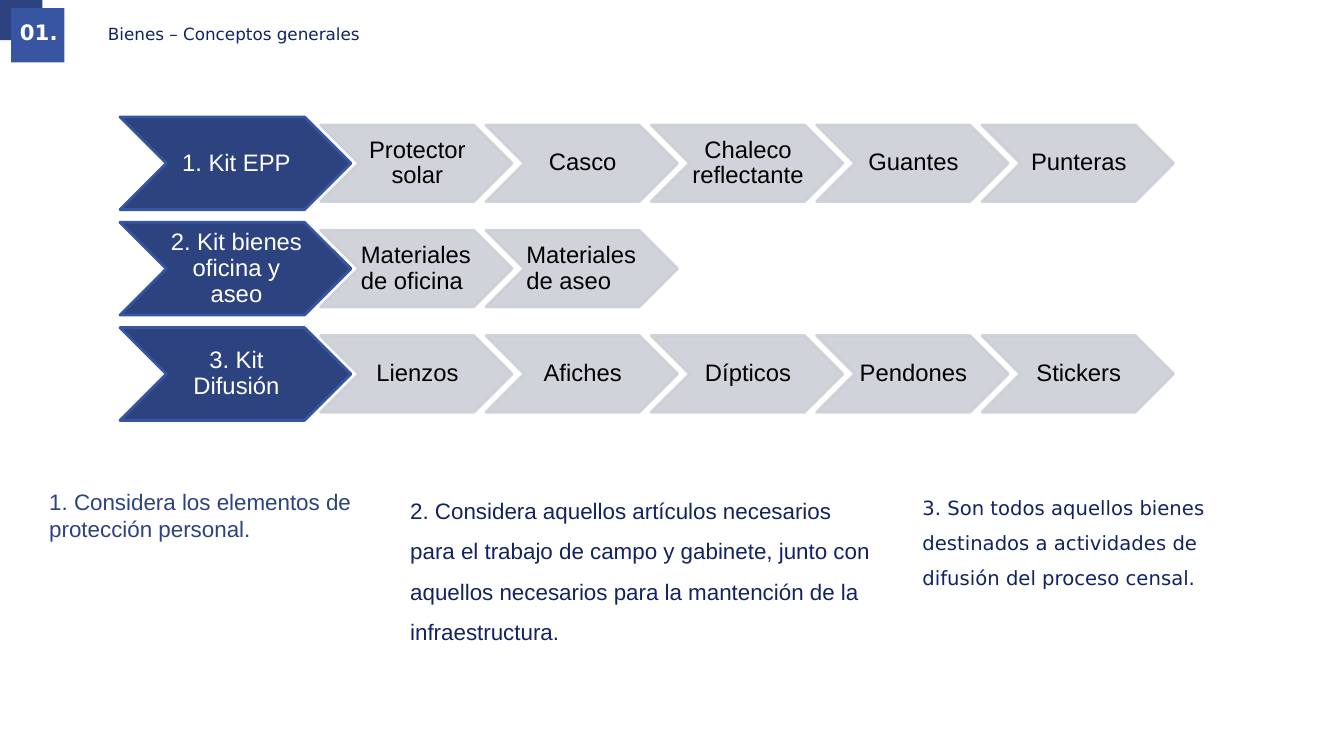
from dataclasses import dataclass

from lxml import etree
from pptx import Presentation
from pptx import util as u
from pptx.dml.color import RGBColor
from pptx.enum import shapes, text
from pptx.oxml import ns


@dataclass(frozen=True)
class Theme:
    navy: str = "2C437F"
    blue: str = "3755A1"
    ink: str = "122361"
    grey: str = "CDCFD8"
    white: str = "FFFFFF"
    black: str = "000000"
    plain: str = "Arial"
    wide: str = "DejaVu Sans"
    badge_size: float = 15.2
    title_size: float = 12
    kit_size: float = 17
    note_size: float = 16
    small_note_size: float = 14


THEME = Theme()
ALIGN = text.PP_ALIGN

KITS = [
    ("1. Kit EPP", ALIGN.CENTER,
     ["Protector solar", "Casco", "Chaleco reflectante", "Guantes", "Punteras"]),
    ("2. Kit bienes oficina y aseo", ALIGN.JUSTIFY,
     ["Materiales de oficina", "Materiales de aseo"]),
    ("3. Kit Difusión", ALIGN.CENTER,
     ["Lienzos", "Afiches", "Dípticos", "Pendones", "Stickers"]),
]


def write(shape, words, *, size, color, font=THEME.plain, bold=False,
          align=ALIGN.LEFT, anchor=text.MSO_ANCHOR.MIDDLE, spacing=0.9,
          insets=(0.1, 0.05, 0.1, 0.05)):
    frame = shape.text_frame
    frame.word_wrap = True
    frame.auto_size = text.MSO_AUTO_SIZE.NONE
    frame.vertical_anchor = anchor
    (frame.margin_left, frame.margin_top,
     frame.margin_right, frame.margin_bottom) = map(u.Inches, insets)
    para = frame.paragraphs[0]
    para.alignment = align
    para.line_spacing = spacing
    para.space_before = u.Pt(0)
    span = para.add_run()
    span.text = words
    span.font.name = font
    span.font.size = u.Pt(size)
    span.font.bold = bold
    span.font.color.rgb = RGBColor.from_string(color)


def add_block(page, kind, box, fill, line=None, opacity=None):
    shape = page.shapes.add_shape(kind, *map(u.Inches, box))
    shape.shadow.inherit = False
    shape.fill.solid()
    shape.fill.fore_color.rgb = RGBColor.from_string(fill)
    if line:
        shape.line.color.rgb = RGBColor.from_string(line)
        shape.line.width = u.Pt(2)
    else:
        shape.line.fill.background()
    if opacity:
        for color in shape.fill._xPr.iter(ns.qn("a:srgbClr")):
            etree.SubElement(color, ns.qn("a:alpha"), val=str(opacity * 1000))
    return shape


def add_header(page, box):
    left, top, width, height = box
    # Number badge
    rect = shapes.MSO_SHAPE.RECTANGLE
    add_block(page, rect, (left, top, 0.42, 0.4), THEME.navy)
    badge = add_block(page, rect, (left + 0.11, top + 0.08, 0.53, 0.54), THEME.blue)
    write(badge, "01.", size=THEME.badge_size, color=THEME.white, font=THEME.wide,
          bold=True, align=ALIGN.CENTER, spacing=0.7, insets=(0.02, 0.05, 0, 0.05))
    # Title
    title = page.shapes.title
    title.left, title.top = u.Inches(left + 1.07), u.Inches(top + 0.08)
    title.width, title.height = u.Inches(width - 1.07), u.Inches(height - 0.08)
    write(title, "Bienes – Conceptos generales", size=THEME.title_size,
          color=THEME.ink, font=THEME.wide, insets=(0, 0.05, 0.1, 0.05))


def add_kit_row(page, box, kit):
    name, item_align, items = kit
    left, top, head_width, height = box
    item_width, item_height, item_pitch = 1.9, 0.76, 1.64
    chevron = shapes.MSO_SHAPE.CHEVRON
    insets = (0.02, 0.01, 0, 0.01)

    head = add_block(page, chevron, box, THEME.navy, THEME.blue)
    write(head, name, size=THEME.kit_size, color=THEME.white,
          align=ALIGN.CENTER, insets=insets)

    item_top = top + (height - item_height) / 2
    for column, item in enumerate(items):
        item_left = left + 1.99 + column * item_pitch
        step = add_block(page, chevron, (item_left, item_top, item_width, item_height),
                         THEME.grey, THEME.grey, opacity=90)
        write(step, item, size=THEME.kit_size, color=THEME.black,
              align=item_align, insets=insets)


def add_kits(page, box):
    left, top, head_width, height = box
    row_height = 0.92
    pitch = (height - row_height) / (len(KITS) - 1)
    for row, kit in enumerate(KITS):
        add_kit_row(page, (left, top + row * pitch, head_width, row_height), kit)


def add_note(page, box, words, **style):
    note = page.shapes.add_textbox(*map(u.Inches, box))
    write(note, words, anchor=text.MSO_ANCHOR.TOP, **style)


def add_notes(page, left, top):
    add_note(page, (left, top + 0.04, 3.37, 0.64),
             "1. Considera los elementos de protección personal.",
             size=THEME.note_size, color=THEME.navy, spacing=1.0)
    add_note(page, (left + 3.58, top, 4.87, 1.72),
             "2. Considera aquellos artículos necesarios para el trabajo de campo y "
             "gabinete, junto con aquellos necesarios para la mantención de la "
             "infraestructura.",
             size=THEME.note_size, color=THEME.ink, spacing=1.5)
    add_note(page, (left + 8.66, top, 3.42, 1.16),
             "3. Son todos aquellos bienes destinados a actividades de difusión "
             "del proceso censal.",
             size=THEME.small_note_size, color=THEME.ink, font=THEME.wide, spacing=1.5)


def main():
    deck = Presentation()
    deck.slide_width, deck.slide_height = u.Inches(13.33), u.Inches(7.5)
    title_only = deck.slide_layouts.get_by_name("Title Only")
    page = deck.slides.add_slide(title_only)
    add_header(page, (0, 0, 12.73, 0.62))
    add_kits(page, (1.19, 1.16, 2.29, 3.01))
    add_notes(page, 0.39, 4.75)
    deck.save("out.pptx")


if __name__ == "__main__":
    main()
